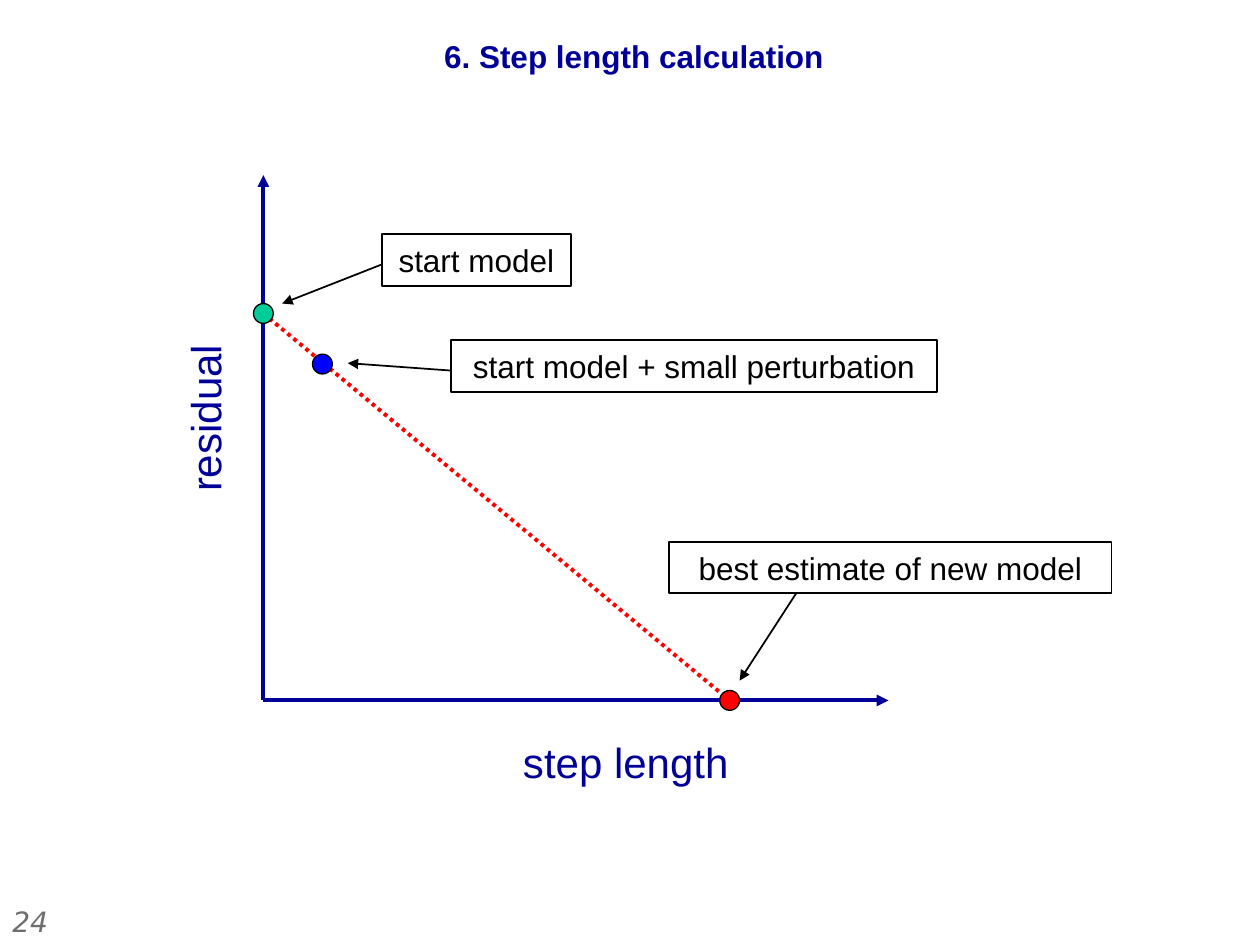
from dataclasses import dataclass

from lxml.etree import SubElement
from pptx import Presentation
from pptx.dml.color import RGBColor
from pptx.enum.dml import MSO_LINE
from pptx.enum.shapes import MSO_CONNECTOR, MSO_SHAPE
from pptx.enum.text import MSO_ANCHOR, PP_ALIGN
from pptx.oxml.ns import qn
from pptx.util import Cm, Pt


@dataclass(frozen=True)
class Theme:
    navy: str = "000099"
    black: str = "000000"
    grey: str = "6E6E6F"
    red: str = "FF0000"
    blue: str = "0000FF"
    green: str = "00CC99"
    font: str = "Arial"
    number_font: str = "DejaVu Sans"
    number_size: int = 16
    body_size: int = 18
    axis_size: int = 24


@dataclass(frozen=True)
class Box:
    """A region in centimetres."""
    left: float
    top: float
    width: float
    height: float

    def at(self, point):
        return self.left + point[0], self.top + point[1]

    def inner(self, left, top, width, height):
        return Box(*self.at((left, top)), width, height)

    def lengths(self):
        return [Cm(value) for value in (self.left, self.top, self.width, self.height)]


THEME = Theme()
MARKER_SIZE = 0.4
CALLOUT_HEIGHT = 1.04


def write(shape, text, size, color, font=THEME.font, bold=False, italic=False,
          alignment=PP_ALIGN.CENTER, anchor=MSO_ANCHOR.TOP):
    frame = shape.text_frame
    frame.word_wrap = True
    frame.vertical_anchor = anchor
    paragraph = frame.paragraphs[0]
    paragraph.alignment = alignment
    run = paragraph.add_run()
    run.text = text
    run.font.name = font
    run.font.size = Pt(size)
    run.font.bold = bold
    run.font.italic = italic
    run.font.color.rgb = RGBColor.from_string(color)
    return paragraph


def add_line(shapes, start, end, color, width, arrow=False, dash=None):
    ends = [Cm(value) for value in (*start, *end)]
    connector = shapes.add_connector(MSO_CONNECTOR.STRAIGHT, *ends)
    connector.line.color.rgb = RGBColor.from_string(color)
    connector.line.width = Pt(width)
    if dash:
        connector.line.dash_style = dash
    if arrow:
        SubElement(connector.line._get_or_add_ln(), qn("a:tailEnd"), type="triangle")
    SubElement(connector._element.spPr, qn("a:effectLst"))


def add_outlined(shapes, kind, box, line_width, fill=None):
    shape = shapes.add_shape(kind, *box.lengths())
    shape.shadow.inherit = False
    if fill:
        shape.fill.solid()
        shape.fill.fore_color.rgb = RGBColor.from_string(fill)
    else:
        shape.fill.background()
    shape.line.color.rgb = RGBColor.from_string(THEME.black)
    shape.line.width = Pt(line_width)
    return shape


def add_page_number(slide, box):
    number = slide.shapes.add_textbox(*box.lengths())
    write(number, "24", THEME.number_size, THEME.grey, THEME.number_font,
          italic=True, alignment=PP_ALIGN.LEFT)


def add_title(slide, box):
    title = slide.shapes.add_textbox(*box.lengths())
    paragraph = write(title, "6. Step length calculation", THEME.body_size,
                      THEME.navy, bold=True)
    paragraph.line_spacing = 0.9


def add_axes(slide, box):
    shapes = slide.shapes.add_group_shape().shapes
    origin = box.at((0, box.height))
    for tip in ((0, 0), (box.width, box.height)):
        add_line(shapes, origin, box.at(tip), THEME.navy, 2.25, arrow=True)
    for text, left, top, rotation in (("step length", 4.6, 11.2, 0),
                                      ("residual", -3.89, 4.27, 270)):
        label = shapes.add_textbox(*box.inner(left, top, 5.41, 1.27).lengths())
        label.rotation = rotation
        write(label, text, THEME.axis_size, THEME.navy)


def add_model(slide, box, text, color, center, label, arrow):
    """Marker, pointing arrow and callout of one model."""
    shapes = slide.shapes.add_group_shape().shapes
    corner = [value - MARKER_SIZE / 2 for value in center]
    marker = box.inner(*corner, MARKER_SIZE, MARKER_SIZE)
    add_outlined(shapes, MSO_SHAPE.OVAL, marker, 0.75, color)
    start, end = arrow
    add_line(shapes, box.at(start), box.at(end), THEME.black, 1, arrow=True)
    callout = add_outlined(shapes, MSO_SHAPE.RECTANGLE,
                           box.inner(*label, CALLOUT_HEIGHT), 1)
    write(callout, text, THEME.body_size, THEME.black, anchor=MSO_ANCHOR.MIDDLE)


def add_plot(slide, box):
    start_point, trial_point, best_point = (0, 2.79), (1.19, 3.81), (9.4, box.height)
    add_line(slide.shapes, box.at(start_point), box.at(best_point), THEME.red, 2.25,
             dash=MSO_LINE.ROUND_DOT)
    add_axes(slide, box)
    # Text, marker colour, marker centre, callout (left, top, width), arrow ends
    models = (
        ("start model", THEME.green, start_point,
         (2.39, 1.19, 3.81), ((2.39, 1.8), (0.38, 2.59))),
        ("start model + small perturbation", THEME.blue, trial_point,
         (3.78, 3.33, 9.8), ((3.78, 3.94), (1.7, 3.79))),
        ("best estimate of new model", THEME.red, best_point,
         (8.18, 7.39, 8.92), ((10.74, 8.43), (9.6, 10.19))),
    )
    for model in models:
        add_model(slide, box, *model)


def main():
    presentation = Presentation()
    presentation.slide_width = Cm(25.4)
    presentation.slide_height = Cm(19.05)
    slide = presentation.slides.add_slide(presentation.slide_layouts[6])
    add_page_number(slide, Box(0, 18.11, 2, 0.94))
    add_title(slide, Box(1.98, 0.71, 21.6, 1.6))
    add_plot(slide, Box(5.31, 3.53, 12.6, 10.59))
    presentation.save("out.pptx")


if __name__ == "__main__":
    main()
